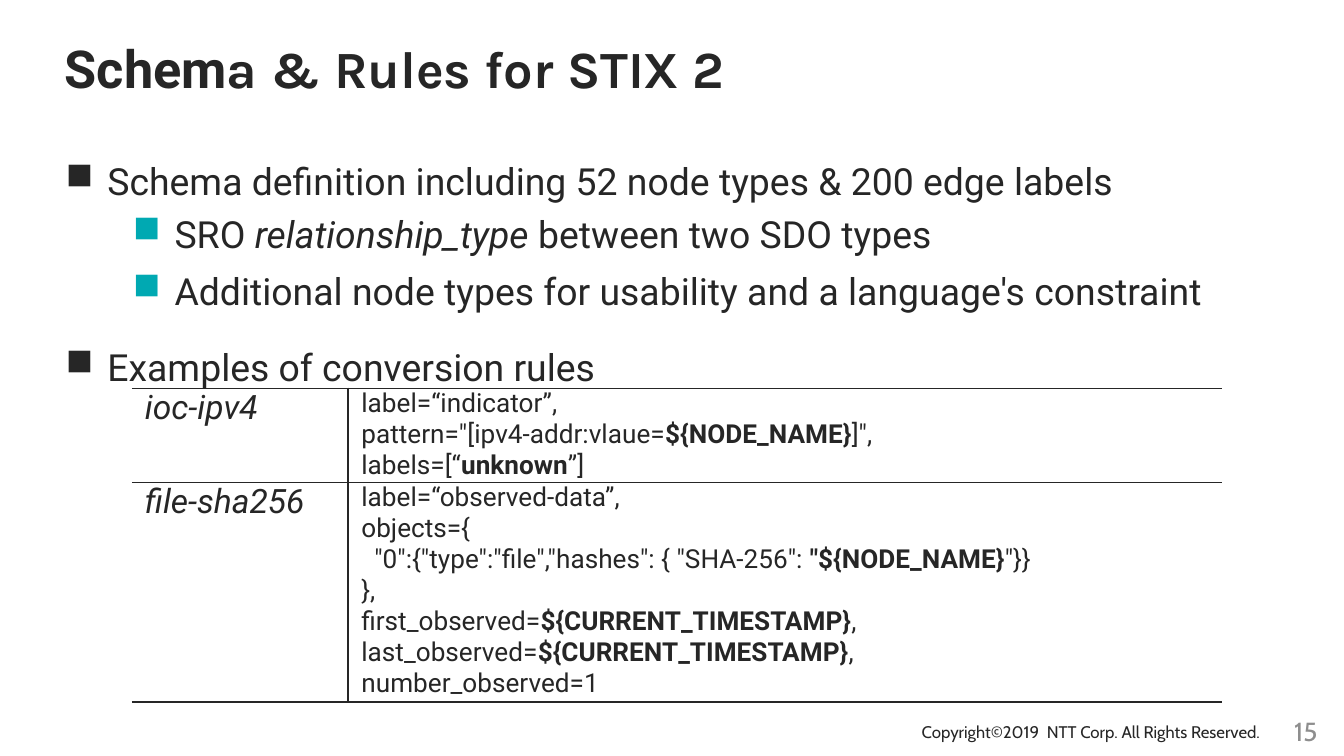
from lxml import etree
from pptx import Presentation
from pptx.dml.color import RGBColor
from pptx.enum import text
from pptx.oxml import ns
from pptx.util import Cm, Pt

COLORS = {"ink": "262626", "accent": "00A9B2", "muted": "8E8E8E"}
BODY_FONT, TITLE_FONT, FOOTER_FONT = "Roboto", "Karla", "Cabin"

# Each line is a list of spans: (words, style), style "b" bold or "i" italic
BULLETS = [
    (0, [("Schema definition including 52 node types & 200 edge labels", "")]),
    (1, [("SRO ", ""), ("relationship_type", "i"), (" between two SDO types", "")]),
    (1, [("Additional node types for usability and a language's constraint", "")]),
    (0, [("Examples of conversion rules", "")]),
]
RULES = [
    ("ioc-ipv4", [
        [("label=“indicator”,", "")],
        [('pattern="[ipv4-addr:vlaue=', ""), ("${NODE_NAME}", "b"), (']",', "")],
        [("labels=[“", ""), ("unknown", "b"), ("”]", "")],
    ]),
    ("file-sha256", [
        [("label=“observed-data”,", "")],
        [("objects={", "")],
        [('  "0":{"type":"file","hashes": { "SHA-256": ', ""),
         ('"${NODE_NAME}', "b"), ('"}}', "")],
        [("},", "")],
        [("first_observed=", ""), ("${CURRENT_TIMESTAMP}", "b"), (",", "")],
        [("last_observed=", ""), ("${CURRENT_TIMESTAMP}", "b"), (",", "")],
        [("number_observed=1", "")],
    ]),
]


class SlideBuilder:
    def __init__(self, page):
        self.page = page

    def add_span(self, para, words, size, font=BODY_FONT, color="ink", style=""):
        span = para.add_run()
        span.text = words
        span.font.name = font
        span.font.size = Pt(size)
        span.font.bold = "b" in style
        span.font.italic = "i" in style
        span.font.color.rgb = RGBColor.from_string(COLORS[color])

    def fill_lines(self, frame, lines, size):
        for index, spans in enumerate(lines):
            para = frame.add_paragraph() if index else frame.paragraphs[0]
            for words, style in spans:
                self.add_span(para, words, size, style=style)

    def title(self, spans, left, top, width, height):
        box = self.page.shapes.title
        box.left, box.top, box.width, box.height = left, top, width, height
        frame = box.text_frame
        frame.auto_size = text.MSO_AUTO_SIZE.NONE
        frame.vertical_anchor = text.MSO_ANCHOR.MIDDLE
        para = frame.paragraphs[0]
        para.alignment = text.PP_ALIGN.LEFT
        para.line_spacing = 1.1
        for words, font in spans:
            self.add_span(para, words, 28, font, style="b")

    def label(self, words, size, color, left, top, width, height, align, wrap=True):
        box = self.page.shapes.add_textbox(left, top, width, height)
        frame = box.text_frame
        frame.word_wrap = wrap
        frame.vertical_anchor = text.MSO_ANCHOR.MIDDLE
        frame.paragraphs[0].alignment = align
        self.add_span(frame.paragraphs[0], words, size, FOOTER_FONT, color)

    def set_bullet(self, para, level):
        properties = para._p.get_or_add_pPr()
        properties.set("marL", str(Cm(0.79 + 1.27 * level)))
        properties.set("indent", str(Cm(-0.79)))
        tint = etree.SubElement(properties, ns.qn("a:buClr"))
        etree.SubElement(tint, ns.qn("a:srgbClr"),
                         val=COLORS["accent" if level else "ink"])
        etree.SubElement(properties, ns.qn("a:buChar"), char="■")

    def bullets(self, items, left, top, width, height):
        frame = self.page.shapes.add_textbox(left, top, width, height).text_frame
        frame.word_wrap = True
        self.fill_lines(frame, [spans for _, spans in items], 20)
        for index, (level, _) in enumerate(items):
            para = frame.paragraphs[index]
            self.set_bullet(para, level)
            para.level = level
            para.line_spacing = 1.1
            if index:
                para.space_before = Pt(2 if level else 12)
            para.space_after = Pt(2 if level else 0)

    def set_borders(self, cell, sides):
        properties = cell._tc.get_or_add_tcPr()
        for position, side in enumerate("LRTB"):
            line = etree.Element(ns.qn("a:ln" + side), w=str(Pt(1)))
            if side in sides:
                fill = etree.SubElement(line, ns.qn("a:solidFill"))
                etree.SubElement(fill, ns.qn("a:srgbClr"), val=COLORS["ink"])
            else:
                etree.SubElement(line, ns.qn("a:noFill"))
            properties.insert(position, line)

    def rule_table(self, rules, left, top, widths, row_height):
        table = self.page.shapes.add_table(
            len(rules), len(widths), left, top, sum(widths),
            row_height * len(rules)).table
        table.first_row = table.horz_banding = False
        for column, width in zip(table.columns, widths):
            column.width = width
        for row, (name, lines) in enumerate(rules):
            table.rows[row].height = row_height
            contents = [([[(name, "i")]], 18, "RTB"), (lines, 14, "LTB")]
            for column, (cell_lines, size, sides) in enumerate(contents):
                cell = table.cell(row, column)
                cell.margin_left = cell.margin_right = Cm(0.25)
                cell.margin_top = cell.margin_bottom = 0
                cell.fill.background()
                self.set_borders(cell, sides)
                self.fill_lines(cell.text_frame, cell_lines, size)


def main():
    deck = Presentation()
    deck.slide_width, deck.slide_height = Cm(25.4), Cm(14.29)
    builder = SlideBuilder(deck.slides.add_slide(deck.slide_layouts[5]))

    # Footer
    builder.label("15", 14, "muted", Cm(24.03), Cm(13.31), Cm(1.3), Cm(1.02),
                  text.PP_ALIGN.CENTER)
    builder.label("Copyright©2019  NTT Corp. All Rights Reserved.", 9, "ink",
                  Cm(17.17), Cm(13.51), Cm(6.96), Cm(0.64),
                  text.PP_ALIGN.LEFT, wrap=False)

    # Title
    builder.title([("Schem", BODY_FONT), ("a & Rules for STIX 2", TITLE_FONT)],
                  Cm(0.97), Cm(0.56), Cm(19.28), Cm(1.32))

    # Bullets
    builder.bullets(BULLETS, Cm(0.99), Cm(2.79), Cm(23.47), Cm(10.21))

    # Conversion rules
    builder.rule_table(RULES, Cm(2.49), Cm(7.34), [Cm(4.09), Cm(16.51)], Cm(1.04))

    deck.save("out.pptx")


if __name__ == "__main__":
    main()
